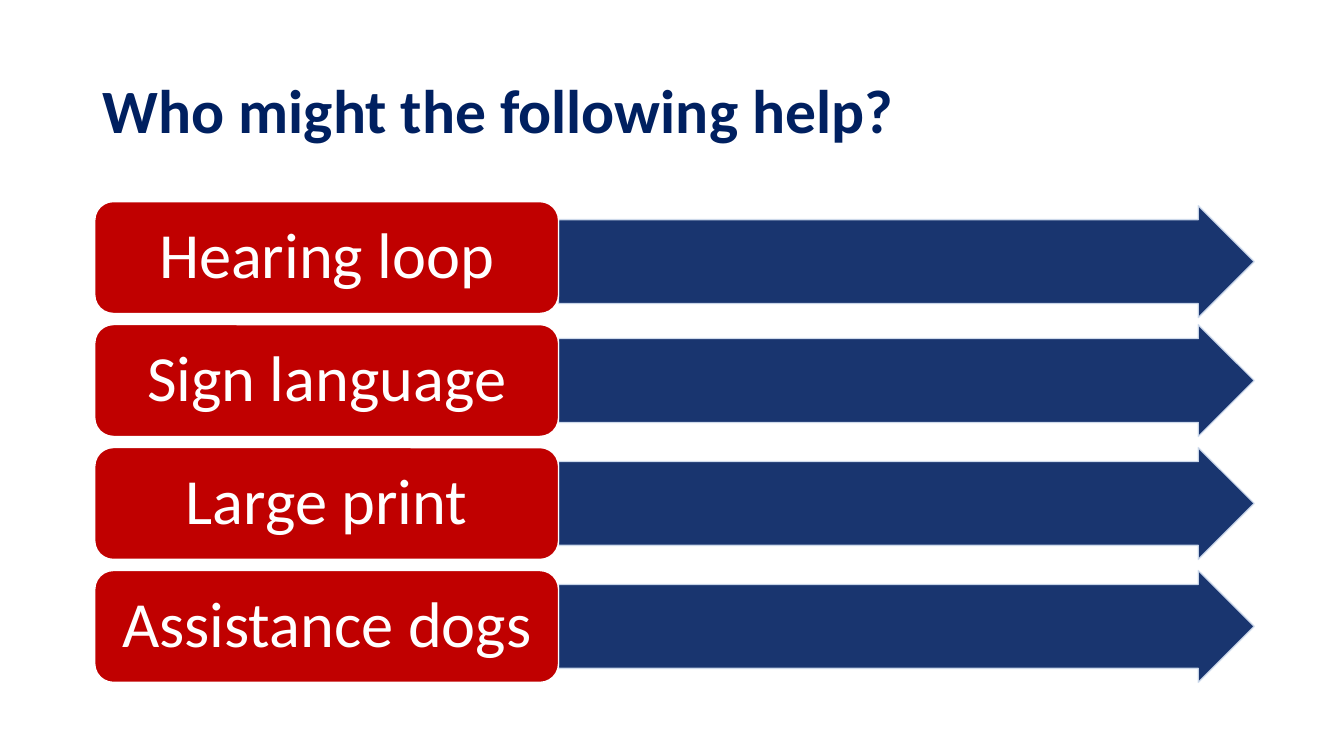
from dataclasses import dataclass

from lxml.etree import SubElement
from pptx import Presentation
from pptx.dml.color import RGBColor
from pptx.enum.shapes import MSO_SHAPE as Shape
from pptx.enum.text import MSO_ANCHOR as Anchor, MSO_AUTO_SIZE as AutoSize, PP_ALIGN as Align
from pptx.oxml.ns import qn
from pptx.util import Inches, Pt


@dataclass(frozen=True)
class Theme:
    font: str = "Calibri"
    navy: str = "002060"
    red: str = "C00000"
    white: str = "FFFFFF"
    pale: str = "D2DEEF"
    title_size: int = 44
    label_size: int = 46
    line_width: int = 1
    arrow_opacity: int = 90


@dataclass(frozen=True)
class Grid:
    """Label and arrow columns, with evenly spaced rows (inches)."""
    left: float = 0.94
    top: float = 2.0
    label_width: float = 4.6
    arrow_width: float = 6.9
    row_height: float = 1.11
    pitch: float = 1.22

    def label(self, row):
        return self.left, self.top + row * self.pitch, self.label_width, self.row_height

    def arrow(self, row, drop):
        left = self.left + self.label_width
        return left, self.top + row * self.pitch + drop, self.arrow_width, self.row_height


class SlideBuilder:
    def __init__(self, page, theme, grid):
        self.page, self.theme, self.grid = page, theme, grid

    def add_text(self, shape, text, size, color, align, bold=False):
        frame = shape.text_frame
        frame.word_wrap = True
        frame.auto_size = AutoSize.NONE
        frame.vertical_anchor = Anchor.MIDDLE
        para = frame.paragraphs[0]
        para.alignment = align
        para.line_spacing = 0.9
        span = para.add_run()
        span.text = text
        span.font.name = self.theme.font
        span.font.size = Pt(size)
        span.font.bold = bold
        span.font.color.rgb = RGBColor.from_string(color)
        return frame

    def block(self, kind, area, fill, line):
        box = self.page.shapes.add_shape(kind, *map(Inches, area))
        box.shadow.inherit = False
        box.fill.solid()
        box.fill.fore_color.rgb = RGBColor.from_string(fill)
        box.line.color.rgb = RGBColor.from_string(line)
        box.line.width = Pt(self.theme.line_width)
        return box

    def title(self, text, area):
        box = self.page.shapes.title
        box.left, box.top, box.width, box.height = map(Inches, area)
        self.add_text(box, text, self.theme.title_size, self.theme.navy, Align.LEFT, bold=True)

    def arrow(self, row, drop):
        box = self.block(Shape.RIGHT_ARROW, self.grid.arrow(row, drop),
                         self.theme.navy, self.theme.pale)
        box.adjustments[0], box.adjustments[1] = 0.75, 0.5
        # Fill and outline share the same opacity
        for color in box._element.spPr.iter(qn("a:srgbClr")):
            SubElement(color, qn("a:alpha"), val=str(self.theme.arrow_opacity * 1000))

    def label(self, row, text):
        box = self.block(Shape.ROUNDED_RECTANGLE, self.grid.label(row),
                         self.theme.red, self.theme.white)
        frame = self.add_text(box, text, self.theme.label_size, self.theme.white, Align.CENTER)
        frame.margin_left = frame.margin_right = Inches(0.19)
        frame.margin_top = frame.margin_bottom = Inches(0.1)


def main():
    deck = Presentation()
    deck.slide_width, deck.slide_height = Inches(13.33), Inches(7.5)
    page = deck.slides.add_slide(deck.slide_layouts[5])
    builder = SlideBuilder(page, Theme(), Grid())

    # Question
    builder.title("Who might the following help?", (0.92, 0.4, 11.5, 1.45))

    # Support measures, each with an arrow; the first arrow sits slightly lower
    measures = ["Hearing loop", "Sign language", "Large print", "Assistance dogs"]
    for row, measure in enumerate(measures):
        builder.arrow(row, drop=0.04 if row == 0 else 0)
        builder.label(row, measure)

    deck.save("out.pptx")


if __name__ == "__main__":
    main()
